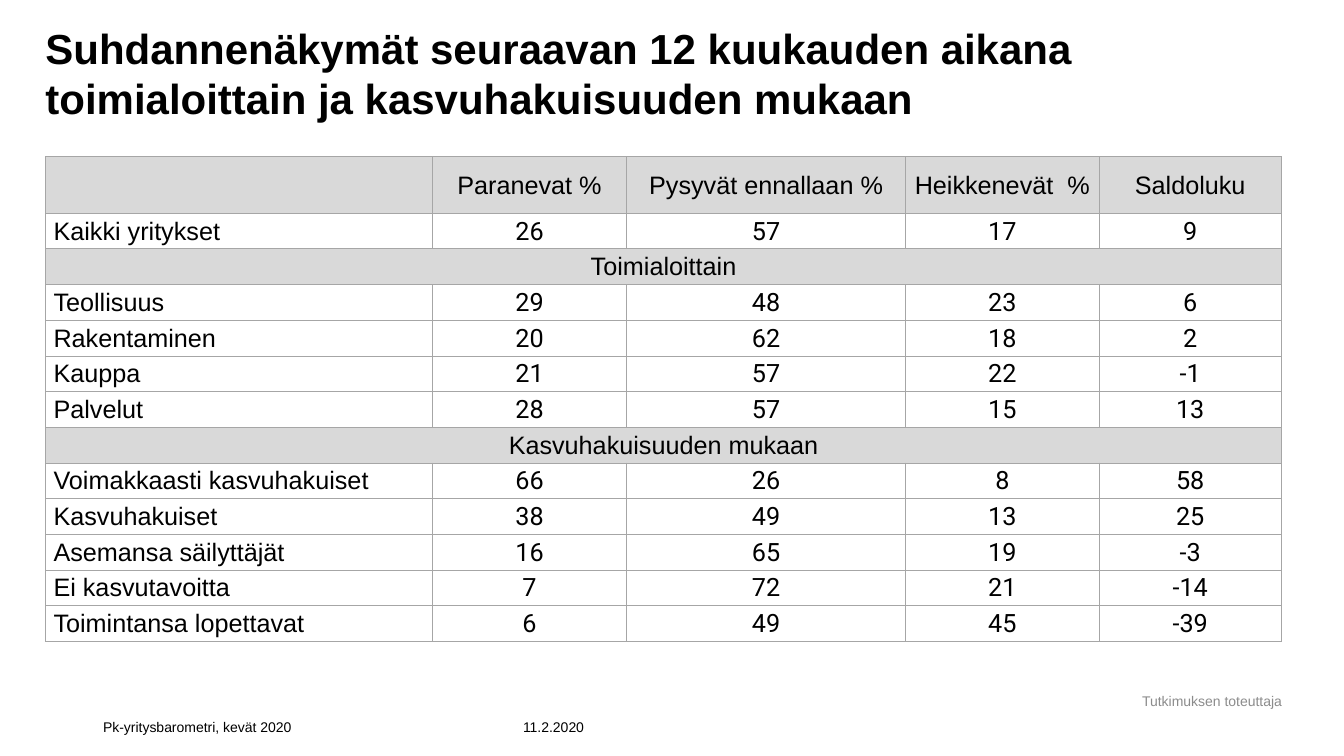
from lxml import etree
from pptx import Presentation
from pptx.dml.color import RGBColor
from pptx.enum.text import MSO_ANCHOR, PP_ALIGN
from pptx.oxml import parse_xml
from pptx.util import Pt

LEFT, MID = PP_ALIGN.LEFT, PP_ALIGN.CENTER
BASE, HALF = MSO_ANCHOR.BOTTOM, MSO_ANCHOR.MIDDLE
BLACK, GREY, PALE, EDGE = "000000", "8C8C8C", "D9D9D9", "A6A6A6"
NS = "http://schemas.openxmlformats.org/drawingml/2006/main"


def color(code):
    return RGBColor.from_string(code)


def write(frame, text, size=18, font="Arial", ink=BLACK, bold=False, align=LEFT):
    para = frame.paragraphs[0]
    para.text = text
    para.alignment = align
    for run in para.runs:
        run.font.size = Pt(size)
        run.font.name = font
        run.font.bold = bold
        run.font.color.rgb = color(ink)


deck = Presentation()
deck.slide_width, deck.slide_height = Pt(960), Pt(540)
slide = deck.slides.add_slide(deck.slide_layouts[6])

# Title and footer: text, box, anchor, inset, format
title = "Suhdannenäkymät seuraavan 12 kuukauden aikana\vtoimialoittain ja kasvuhakuisuuden mukaan"
notes = [
    (title, (32.5, 0, 885.5, 88), BASE, 0, {"size": 30, "bold": True}),
    ("Tutkimuksen toteuttaja", (803.5, 491, 124.5, 19), HALF, 7.2,
     {"size": 10, "ink": GREY, "align": MID}),
    ("11.2.2020", (366.5, 504, 62.5, 25), BASE, 7.2, {"size": 10}),
    ("Pk-yritysbarometri, kevät 2020", (66.5, 504, 300, 25), BASE, 7.2, {"size": 10}),
]
for text, box, anchor, inset, form in notes:
    frame = slide.shapes.add_textbox(*map(Pt, box)).text_frame
    frame.word_wrap = True
    frame.vertical_anchor = anchor
    frame.margin_left = frame.margin_right = Pt(inset)
    frame.margin_top = frame.margin_bottom = Pt(inset / 2)
    write(frame, text, **form)

# Table data: a row with one entry is a band across all columns
rows = [
    ("", "Paranevat %", "Pysyvät ennallaan %", "Heikkenevät  %", "Saldoluku"),
    ("Kaikki yritykset", 26, 57, 17, 9),
    ("Toimialoittain",),
    ("Teollisuus", 29, 48, 23, 6),
    ("Rakentaminen", 20, 62, 18, 2),
    ("Kauppa", 21, 57, 22, -1),
    ("Palvelut", 28, 57, 15, 13),
    ("Kasvuhakuisuuden mukaan",),
    ("Voimakkaasti kasvuhakuiset", 66, 26, 8, 58),
    ("Kasvuhakuiset", 38, 49, 13, 25),
    ("Asemansa säilyttäjät", 16, 65, 19, -3),
    ("Ei kasvutavoitta", 7, 72, 21, -14),
    ("Toimintansa lopettavat", 6, 49, 45, -39),
]
widths = [276.5, 138.5, 199.5, 138, 130.5]
head, step = 40.5, 25.5

# Table grid
tall = head + step * (len(rows) - 1)
table = slide.shapes.add_table(
    len(rows), len(widths), Pt(32.5), Pt(111.75), Pt(sum(widths)), Pt(tall)).table
for col, width in zip(table.columns, widths):
    col.width = Pt(width)
for i, line in enumerate(table.rows):
    line.height = Pt(step if i else head)

# Table cells
for i, row in enumerate(rows):
    band = len(row) == 1
    for j in range(len(widths)):
        cell = table.cell(i, j)
        label = j == 0 and not band
        cell.vertical_anchor = HALF
        cell.margin_left = Pt(5.75 if label else 0.75)
        cell.margin_right = cell.margin_top = Pt(0.75)
        cell.margin_bottom = 0
        for side in "LRTB":
            edge = parse_xml(f'<a:ln{side} xmlns:a="{NS}" w="{Pt(0.5)}"/>')
            fill = etree.SubElement(edge, f"{{{NS}}}solidFill")
            etree.SubElement(fill, f"{{{NS}}}srgbClr", val=EDGE)
            cell._tc.get_or_add_tcPr().append(edge)
        if band or i == 0:
            cell.fill.solid()
            cell.fill.fore_color.rgb = color(PALE)
        else:
            cell.fill.background()
        if j < len(row):
            font = "Roboto" if i and j else "Arial"
            write(cell.text_frame, str(row[j]), font=font, align=LEFT if label else MID)
    if band:
        table.cell(i, 0).merge(table.cell(i, len(widths) - 1))

deck.save("out.pptx")
